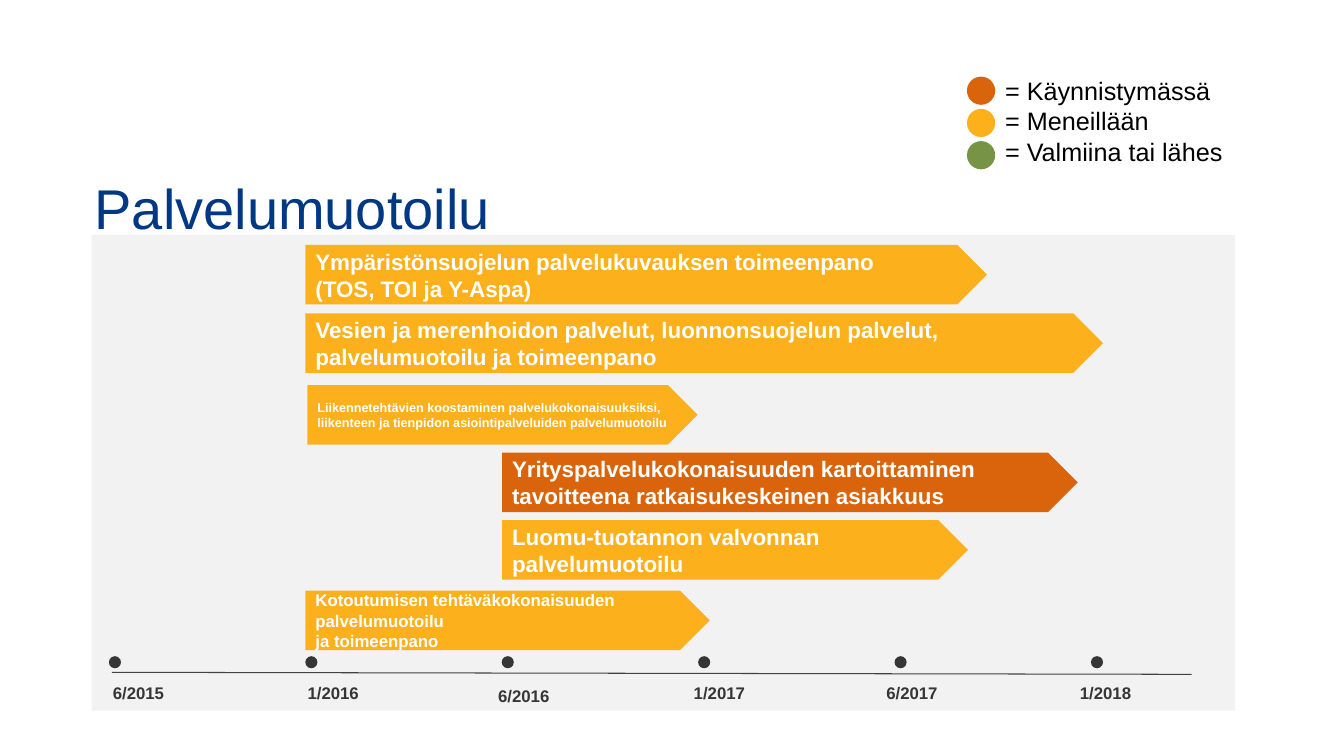
from pptx import Presentation
from pptx.dml.color import RGBColor
from pptx.enum.shapes import MSO_CONNECTOR as CONN, MSO_SHAPE as SHAPE
from pptx.enum.text import MSO_ANCHOR as ANCHOR, PP_ALIGN as ALIGN
from pptx.oxml.ns import qn
from pptx.util import Inches, Pt
from lxml import etree

ORANGE, YELLOW, GREEN = "D9640C", "FCB01C", "779346"
DARK, WHITE = "363636", "FFFFFF"

# Left, top, width, font size, colour, text
PROJECTS = [
    (3.03, 2.43, 6.76, 16, YELLOW,
     "Ympäristönsuojelun palvelukuvauksen toimeenpano\n(TOS, TOI ja Y-Aspa)"),
    (3.03, 3.11, 7.91, 16, YELLOW,
     "Vesien ja merenhoidon palvelut, luonnonsuojelun palvelut, "
     "palvelumuotoilu ja toimeenpano"),
    (3.05, 3.82, 3.87, 9, YELLOW,
     "Liikennetehtävien koostaminen palvelukokonaisuuksiksi, "
     "liikenteen ja tienpidon asiointipalveluiden palvelumuotoilu"),
    (4.98, 4.49, 5.71, 16, ORANGE,
     "Yrityspalvelukokonaisuuden kartoittaminen "
     "tavoitteena ratkaisukeskeinen asiakkuus"),
    (4.98, 5.16, 4.62, 16, YELLOW, "Luomu-tuotannon valvonnan palvelumuotoilu"),
    (3.03, 5.86, 4.01, 12, YELLOW,
     "Kotoutumisen tehtäväkokonaisuuden palvelumuotoilu\nja toimeenpano"),
]
# Date, label left, label top, label width, alignment
DATES = [
    ("6/2015", 1.02, 6.72, 1.02, ALIGN.LEFT),
    ("1/2016", 2.56, 6.72, 1.49, ALIGN.CENTER),
    ("6/2016", 4.45, 6.75, 1.49, ALIGN.CENTER),
    ("1/2017", 6.39, 6.72, 1.49, ALIGN.CENTER),
    ("6/2017", 8.30, 6.72, 1.49, ALIGN.CENTER),
    ("1/2018", 10.22, 6.72, 1.49, ALIGN.CENTER),
]
STATUSES = [("Käynnistymässä", ORANGE), ("Meneillään", YELLOW),
            ("Valmiina tai lähes", GREEN)]


def rgb(color):
    return RGBColor.from_string(color)


def write(tf, text, size, color, bold=False, align=ALIGN.LEFT, **frame):
    """Fill a text frame, one paragraph per line of text."""
    for name, value in {"word_wrap": True, **frame}.items():
        setattr(tf, name, value)
    tf.text = text
    for p in tf.paragraphs:
        p.alignment = align
        for r in p.runs:
            for name, value in {"name": "Arial", "size": Pt(size), "bold": bold}.items():
                setattr(r.font, name, value)
            r.font.color.rgb = rgb(color)


def add_shape(s, kind, box, fill):
    sp = s.shapes.add_shape(kind, *map(Inches, box))
    sp.shadow.inherit = False
    sp.fill.solid()
    sp.fill.fore_color.rgb = rgb(fill)
    sp.line.fill.background()
    return sp


def add_text(s, box, *args, **kwargs):
    sp = s.shapes.add_textbox(*map(Inches, box))
    write(sp.text_frame, *args, **kwargs)


def add_title(s, box):
    add_text(s, box, "Palvelumuotoilu", 40, "003883", margin_top=Inches(0.13))


def add_legend(s, left, top):
    for i, (_, color) in enumerate(STATUSES):
        add_shape(s, SHAPE.OVAL, (left, top + 0.06 + 0.32 * i, 0.28, 0.28), color)
    add_text(s, (left + 0.28, top, 2.38, 1.01),
             "\n".join(f"= {label}" for label, _ in STATUSES),
             18, "000000", word_wrap=False)


def add_projects(s):
    for left, top, width, size, color, text in PROJECTS:
        sp = add_shape(s, SHAPE.PENTAGON, (left, top, width, 0.59), color)
        write(sp.text_frame, text, size, WHITE, bold=True,
              vertical_anchor=ANCHOR.MIDDLE)


def add_timeline(s, left, top):
    # Date labels and evenly spaced dots
    for i, (date, x, y, width, align) in enumerate(DATES):
        add_text(s, (x, y, width, 0.3), date, 12, DARK, bold=True, align=align)
        add_shape(s, SHAPE.OVAL, (left + 1.948 * i, top, 0.12, 0.12), DARK)
    # Axis
    ends = (left + 0.03, top + 0.16, left + 10.74, top + 0.18)
    axis = s.shapes.add_connector(CONN.STRAIGHT, *map(Inches, ends))
    axis.line.color.rgb = rgb("424243")
    axis.line.width = Pt(0.75)
    sp_pr = axis._element.find(qn("p:spPr"))
    etree.SubElement(sp_pr, qn("a:effectLst"))


def main():
    prs = Presentation()
    prs.slide_width, prs.slide_height = Inches(13.33), Inches(7.5)
    s = prs.slides.add_slide(prs.slide_layouts[6])
    # Chart panel
    add_shape(s, SHAPE.RECTANGLE, (0.91, 2.33, 11.34, 4.72), "F2F2F2")
    add_projects(s)
    add_title(s, (0.84, 1.59, 10.2, 0.7))
    add_legend(s, 9.59, 0.7)
    add_timeline(s, 1.08, 6.51)
    prs.save("out.pptx")


if __name__ == "__main__":
    main()
